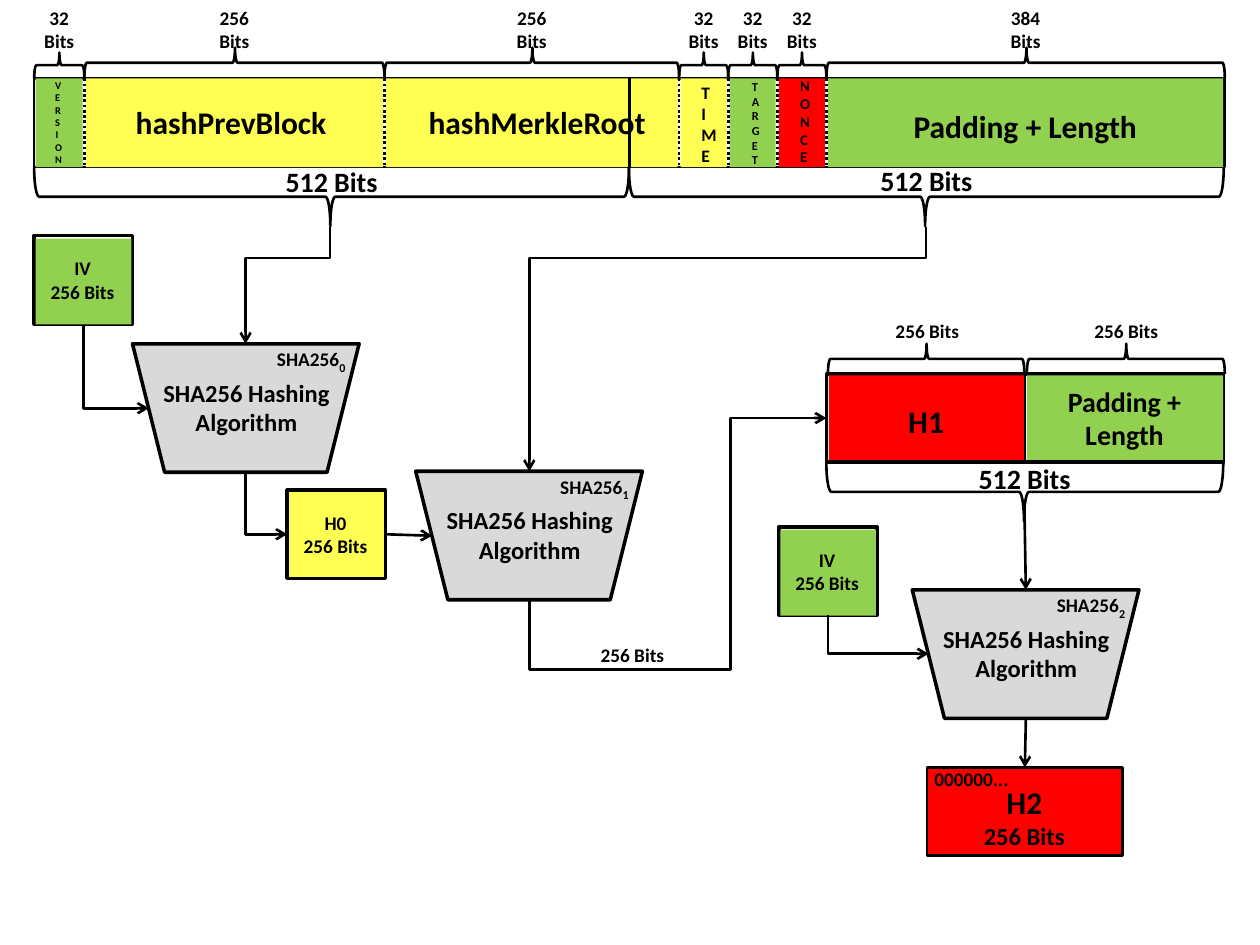
"""Build a slide on how a block header is hashed twice with SHA256."""
from pptx import Presentation
from pptx.dml.color import RGBColor
from pptx.enum.dml import MSO_LINE
from pptx.enum.shapes import MSO_CONNECTOR, MSO_SHAPE
from pptx.enum.text import MSO_AUTO_SIZE, PP_ALIGN
from pptx.oxml.ns import qn
from pptx.util import Cm, Pt
from lxml.etree import SubElement

BLACK = RGBColor(0x00, 0x00, 0x00)
GREEN = RGBColor(0x92, 0xD0, 0x50)
YELLOW = RGBColor(0xFF, 0xFF, 0x53)
RED = RGBColor(0xFF, 0x00, 0x00)
GREY = RGBColor(0xD9, 0xD9, 0xD9)
WHITE = RGBColor(0xFF, 0xFF, 0xFF)

presentation = Presentation()
presentation.slide_width, presentation.slide_height = Cm(25.4), Cm(19.05)
slide = presentation.slides.add_slide(presentation.slide_layouts[6])


def add_block(kind, left, top, width, height, fill=None, line=None, rotation=0):
    shape = slide.shapes.add_shape(kind, Cm(left), Cm(top), Cm(width), Cm(height))
    shape.shadow.inherit = False
    shape.rotation = rotation
    if fill is None:
        shape.fill.background()
    else:
        shape.fill.solid()
        shape.fill.fore_color.rgb = fill
    if line is None:
        shape.line.fill.background()
    else:
        shape.line.color.rgb = BLACK
        shape.line.width = Pt(line)
    return shape


def add_text(text, left, top, width, height, size=11):
    box = slide.shapes.add_textbox(Cm(left), Cm(top), Cm(width), Cm(height))
    frame = box.text_frame
    frame.word_wrap = True
    frame.auto_size = MSO_AUTO_SIZE.SHAPE_TO_FIT_TEXT
    frame.text = text
    for paragraph in frame.paragraphs:
        paragraph.alignment = PP_ALIGN.CENTER
        paragraph.font.name = "Calibri"
        paragraph.font.size = Pt(size)
        paragraph.font.bold = True
        paragraph.font.color.rgb = BLACK
    return frame.paragraphs


HEADER_TOP, HEADER_HEIGHT = 1.58, 1.79
HEADER_BOTTOM = HEADER_TOP + HEADER_HEIGHT
EDGES = [0.69, 1.7, 7.75, 13.69, 14.68, 15.67, 16.66, 24.69]
FIELDS = [
    ("VERSION", "32 Bits", GREEN, (0.86, 1.47, 0.58, 2.03), 5.9),
    ("hashPrevBlock", "256 Bits", YELLOW, (2.21, 1.96, 4.9, 1.02), 18),
    ("hashMerkleRoot", "256 Bits", YELLOW, (8.38, 1.96, 4.9, 1.02), 18),
    ("TIME", "32 Bits", YELLOW, (13.89, 1.52, 0.58, 1.96), 10),
    ("TARGET", "32 Bits", GREEN, (14.91, 1.47, 0.58, 2.06), 7),
    ("NONCE", "32 Bits", RED, (15.88, 1.42, 0.58, 2.08), 8.5),
    ("Padding + Length", "384 Bits", GREEN, (16.81, 2.03, 7.72, 1.02), 18),
]
header = add_block(MSO_SHAPE.RECTANGLE, EDGES[0], HEADER_TOP,
                   EDGES[-1] - EDGES[0], HEADER_HEIGHT, WHITE, 1.5)
braces = [
    (0.69, HEADER_BOTTOM, 11.99, 1.19, 270),
    (12.68, HEADER_BOTTOM, 11.99, 1.19, 270),
    (16.66, 9.32, 8, 1.19, 270),
    (16.69, 6.93, 3.96, 0.61, 90),
    (20.7, 6.93, 3.99, 0.61, 90),
]
for (name, bits, fill, label, size), left, right in zip(FIELDS, EDGES, EDGES[1:]):
    add_block(MSO_SHAPE.RECTANGLE, left + 0.03, HEADER_TOP,
              right - left - 0.06, HEADER_HEIGHT, fill)
    add_text(name, *label, size)
    add_text(bits, (left + right) / 2 - 0.6, 0, 1.2, 1.19)
    brace_height = 0.51 if bits == "32 Bits" else 0.61
    braces.append((left, 1.57 - brace_height, right - left, brace_height, 90))

for left, top, width, height, rotation in braces:
    brace = add_block(MSO_SHAPE.LEFT_BRACE, left + (width - height) / 2,
                      top + (height - width) / 2, height, width,
                      line=1.5, rotation=rotation)
    brace.adjustments[0], brace.adjustments[1] = 0.083, 0.498

for index, (left, top) in enumerate([(2.67, 6.93), (8.38, 9.5), (18.39, 11.89)]):
    add_block(MSO_SHAPE.TRAPEZOID, left, top, 4.57, 2.59, GREY, 2, 180)
    add_text("SHA256 Hashing Algorithm", left + 0.33, top + 0.56, 3.94, 1.45, 14)
    name = add_text("SHA256", left + 2.64, top - 0.08, 1.93, 0.74)[0]
    subscript = name.add_run()
    subscript.text = str(index)
    subscript.font.size = Pt(12)
    subscript.font._element.set("baseline", "-25000")

for left, top in [(0.69, 4.75), (15.7, 10.62)]:
    add_block(MSO_SHAPE.RECTANGLE, left, top, 1.98, 1.78, line=2)
    add_block(MSO_SHAPE.RECTANGLE, left + 0.03, top + 0.06, 1.93, 1.73, GREEN)
    add_text("IV\n256 Bits", left - 0.03, top + 0.3, 2.01, 1.19)
first_hash = add_block(MSO_SHAPE.RECTANGLE, 5.79, 9.88, 1.98, 1.78, YELLOW, 2)
add_text("H0\n256 Bits", 5.76, 10.18, 2.01, 1.19)

second_input = add_block(MSO_SHAPE.RECTANGLE, 16.66, 7.54, 8, 1.78, line=2)
add_block(MSO_SHAPE.RECTANGLE, 16.71, 7.57, 3.94, 1.7, RED)
add_block(MSO_SHAPE.RECTANGLE, 20.7, 7.57, 3.96, 1.7, GREEN)
final_hash = add_block(MSO_SHAPE.RECTANGLE, 18.69, 15.47, 3.94, 1.78, RED, 1.5)
add_text("H1", 16.69, 7.98, 3.96, 1.02, 18)
add_text("Padding + Length", 20.7, 7.62, 3.94, 1.63, 16)
final_label = add_text("H2\n256 Bits", 18.67, 15.67, 3.96, 1.63, 18)
final_label[1].font.size = Pt(14)
add_text("000000...", 18.52, 15.34, 2.13, 0.74)
add_text("256 Bits", 11.71, 12.85, 2.08, 0.74)
for left in (17.73, 21.74):
    add_text("256 Bits", left, 6.32, 1.93, 0.74)
for left, top in [(5.21, 3.2), (17.2, 3.18), (19.18, 9.17)]:
    add_text("512 Bits", left, top, 2.95, 0.94, 16)

connectors = []
straight_lines = [(edge, HEADER_TOP, edge, HEADER_BOTTOM, None, None, "dotted")
                  for edge in EDGES[1:-1]]
straight_lines += [
    (12.69, HEADER_TOP, 12.69, HEADER_BOTTOM, (header, 0), (header, 2), "solid"),
    (20.66, 7.54, 20.66, 9.32, (second_input, 0), (second_input, 2), "solid"),
    (20.65, 10.11, 20.68, 11.89, None, None, "arrow"),
    (7.77, 10.77, 8.71, 10.8, (first_hash, 3), None, "arrow"),
    (20.68, 14.48, 20.65, 15.47, None, (final_hash, 0), "arrow"),
]
for *points, begin, end, style in straight_lines:
    connector = slide.shapes.add_connector(MSO_CONNECTOR.STRAIGHT, *map(Cm, points))
    if begin:
        connector.begin_connect(*begin)
    if end:
        connector.end_connect(*end)
    connectors.append((connector, style))

ELBOWS = [
    (1.68, 6.55, 3, 8.23, "bentConnector2", 270, ["flipH"], []),
    (4.95, 9.53, 5.79, 10.77, "bentConnector2", 270, ["flipH"], []),
    (16.69, 12.4, 18.72, 13.18, "bentConnector2", 270, ["flipH"], []),
    (6.65, 4.57, 4.95, 6.93, "bentConnector3", 90, [], [26700]),
    (18.67, 4.57, 10.67, 9.5, "bentConnector3", 90, [], [12900]),
    (10.67, 12.09, 16.66, 8.43, "bentConnector4", 90, ["flipH", "flipV"], [-38500, 67700]),
]
for x1, y1, x2, y2, preset, rotation, flips, bends in ELBOWS:
    width, height = abs(y2 - y1), abs(x2 - x1)
    left, top = (x1 + x2 - width) / 2, (y1 + y2 - height) / 2
    connector = slide.shapes.add_connector(
        MSO_CONNECTOR.ELBOW, Cm(left), Cm(top), Cm(left + width), Cm(top + height))
    properties = connector.element.spPr
    transform = properties.find(qn("a:xfrm"))
    transform.set("rot", str(rotation * 60000))
    for flip in flips:
        transform.set(flip, "1")
    geometry = properties.find(qn("a:prstGeom"))
    geometry.set("prst", preset)
    for number, bend in enumerate(bends, 1):
        SubElement(geometry.find(qn("a:avLst")), qn("a:gd"),
                   name=f"adj{number}", fmla=f"val {bend}")
    connectors.append((connector, "arrow"))

for connector, style in connectors:
    connector.line.color.rgb = BLACK
    connector.line.width = Pt(1.5)
    properties = connector.element.spPr
    if style == "dotted":
        connector.line.dash_style = MSO_LINE.ROUND_DOT
    elif style == "arrow":
        SubElement(properties.find(qn("a:ln")), qn("a:tailEnd"), type="arrow")
    SubElement(properties, qn("a:effectLst"))

presentation.save("out.pptx")
